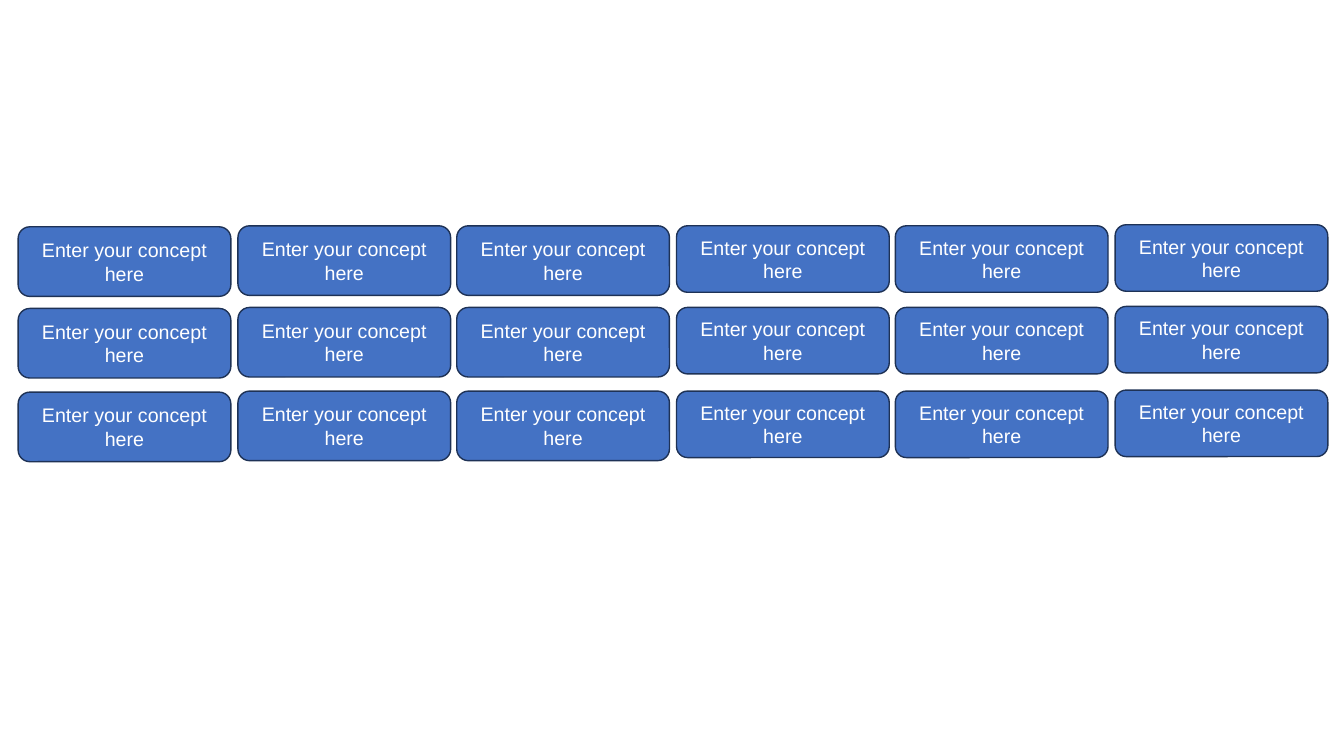
from pptx import Presentation
from pptx.dml.color import RGBColor
from pptx.enum.shapes import MSO_SHAPE as Shape
from pptx.enum.text import MSO_ANCHOR as Anchor, PP_ALIGN as Align
from pptx.util import Pt

EMU_PER_PX = 9144
COLORS = {"fill": "4472C4", "outline": "1E3256", "text": "FFFFFF"}
CONCEPT = "Enter your concept here"
ROW_TOPS = (0, 81, 164)
COLUMN_SHIFTS = (1, 0, 0, 0, 0, -1)
COLUMN_HEIGHTS = (69, 69, 69, 66, 66, 66)
CARD_WIDTH = 211


def px(length):
    return round(length) * EMU_PER_PX


def color(name):
    return RGBColor.from_string(COLORS[name])


def add_card(page, left, top, width, height):
    card = page.shapes.add_shape(
        Shape.ROUNDED_RECTANGLE, px(left), px(top), px(width), px(height))
    card.shadow.inherit = False
    card.fill.solid()
    card.fill.fore_color.rgb = color("fill")
    card.line.color.rgb = color("outline")
    card.line.width = Pt(1)
    frame = card.text_frame
    frame.word_wrap = True
    frame.vertical_anchor = Anchor.MIDDLE
    para = frame.paragraphs[0]
    para.text = CONCEPT
    para.alignment = Align.CENTER
    para.font.name = "Arial"
    para.font.size = Pt(14)
    para.font.color.rgb = color("text")


def add_concept_grid(page, left, top, width):
    pitch = (width - CARD_WIDTH) / (len(COLUMN_SHIFTS) - 1)
    for row_top in ROW_TOPS:
        for column, (shift, height) in enumerate(zip(COLUMN_SHIFTS, COLUMN_HEIGHTS)):
            add_card(page, left + column * pitch, top + row_top + shift,
                     CARD_WIDTH, height)


def main():
    deck = Presentation()
    deck.slide_width, deck.slide_height = px(1333), px(750)
    page = deck.slides.add_slide(deck.slide_layouts[6])
    add_concept_grid(page, 18, 224, 1299)
    deck.save("out.pptx")


if __name__ == "__main__":
    main()
